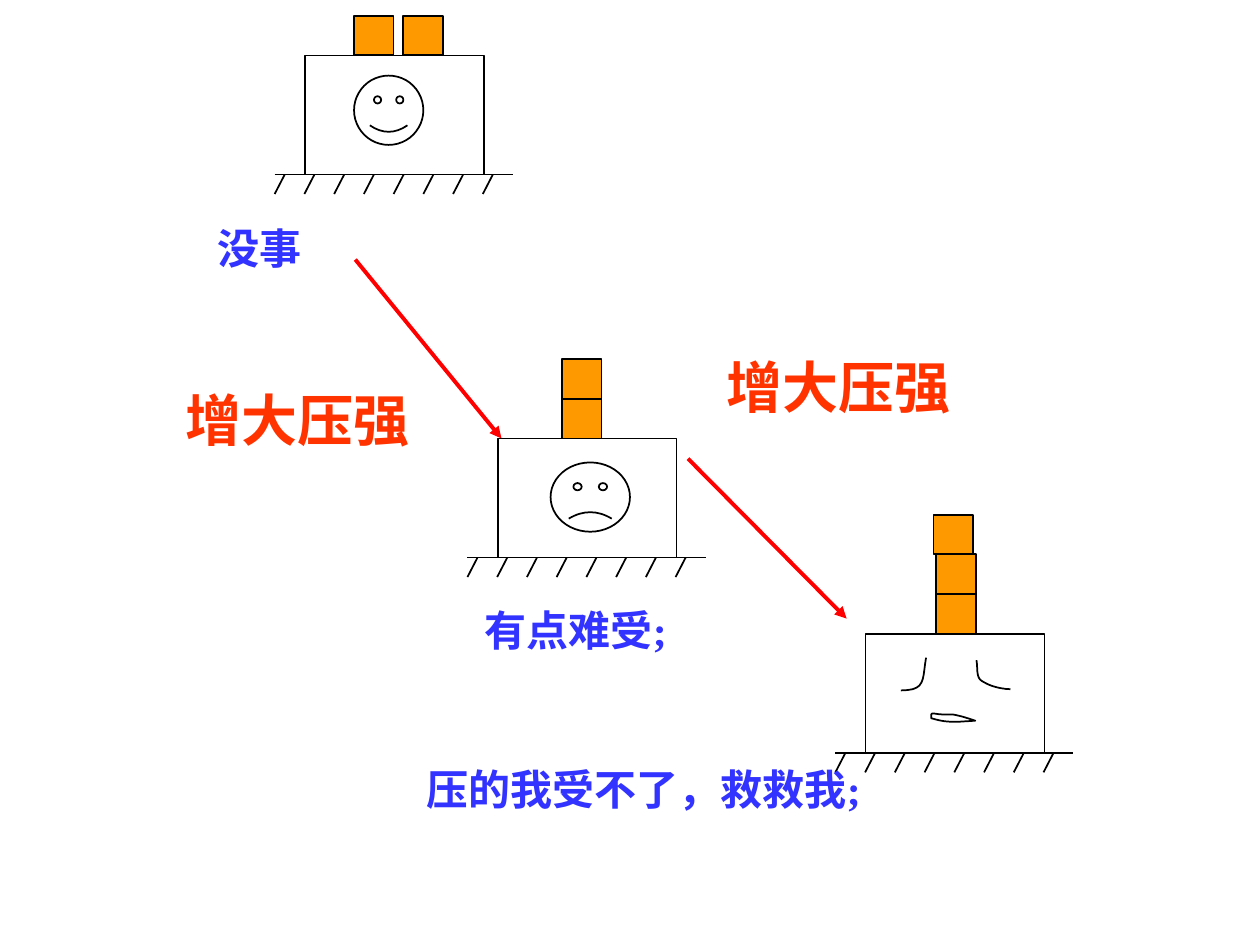
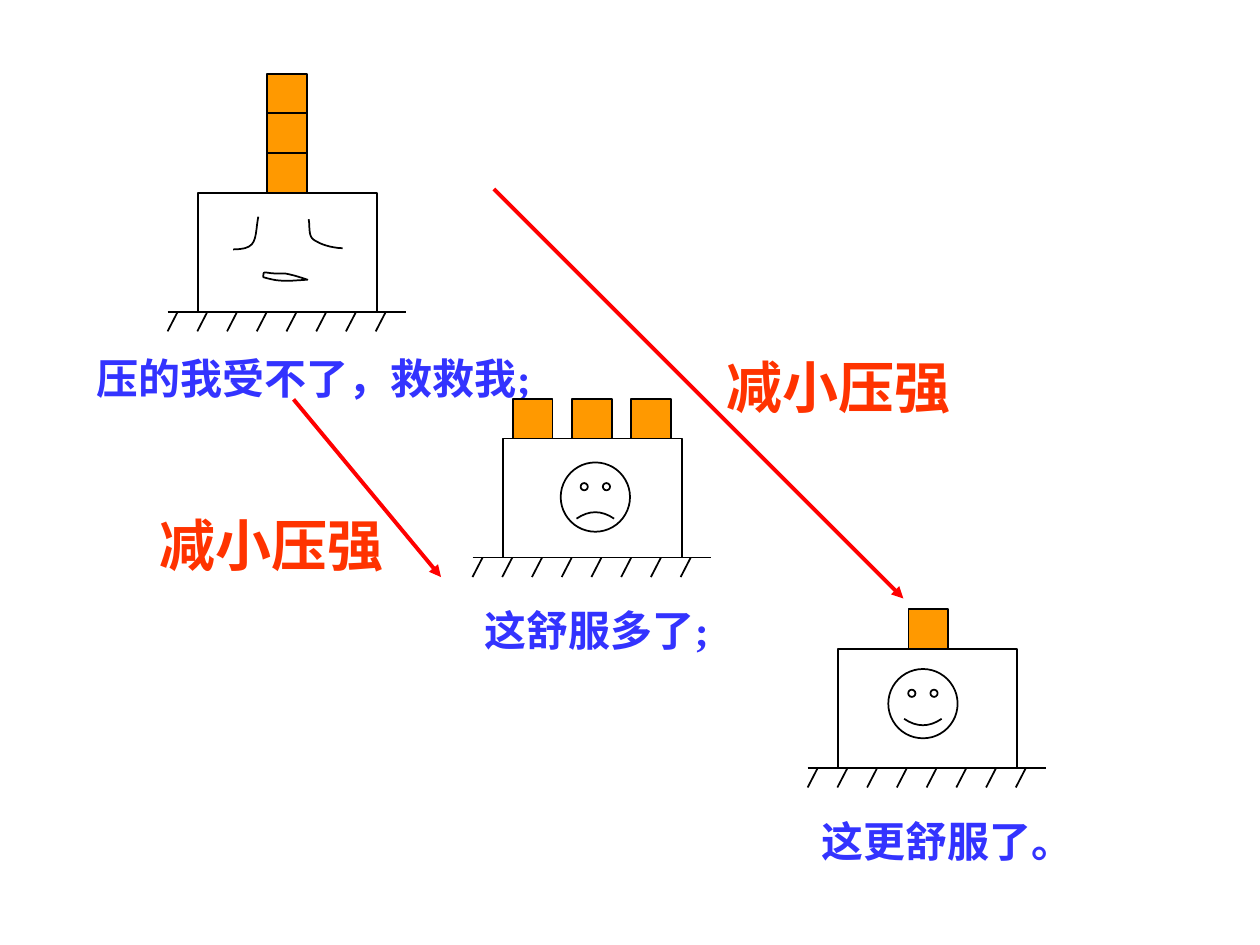
import pptx
import pptx.util
import pptx.dml.color
import pptx.enum.dml
import pptx.enum.lang
import pptx.enum.shapes
import pptx.enum.text
import pptx.oxml

Inches = pptx.util.Inches
Pt = pptx.util.Pt
PRESETS = pptx.enum.shapes.MSO_SHAPE

# Shared colours, fonts and text formats
BLACK, ORANGE, BLUE = "000000", "FF9900", "3333FF"
ARROW_RED, LABEL_RED = "FF0000", "FF3300"
SANS, SERIF = "Cabin", "Times New Roman"
CAPTION = {"size": Pt(24), "bold": True}
PRESSURE = {"size": Pt(32), "bold": True}

# Shared measures of a desk, its weights and the ground below
DESK_W, DESK_H = 1.42, 0.945
WEIGHT = 0.315
GROUND_W, OVERHANG = 1.89, 0.24
TICKS, TICK_GAP, TICK_W, TICK_H = 8, 0.236, 0.08, 0.155

# Suffering face, relative to the desk: start, Bezier segments, closed or not
SUFFERING = [
    ((0.48, 0.19), [((0.45, 0.37), (0.48, 0.45), (0.28, 0.45))], False),
    ((0.88, 0.21), [((0.89, 0.26), (0.88, 0.31), (0.90, 0.35)),
                    ((0.91, 0.37), (0.93, 0.38), (0.95, 0.39)),
                    ((1.00, 0.42), (1.09, 0.44), (1.15, 0.44))], False),
    ((0.52, 0.67), [((0.65, 0.71), (0.71, 0.70), (0.87, 0.69)),
                    ((0.81, 0.67), (0.75, 0.65), (0.69, 0.64)),
                    ((0.52, 0.65), (0.52, 0.60), (0.52, 0.67))], True),
]


def rgb(color):
    return pptx.dml.color.RGBColor.from_string(color)


def style(shape, fill=None):
    """Thin black outline, with a plain fill or none."""
    shape.shadow.inherit = False
    if fill:
        shape.fill.solid()
        shape.fill.fore_color.rgb = rgb(fill)
    else:
        shape.fill.background()
    shape.line.color.rgb = rgb(BLACK)
    shape.line.width = Pt(1)


def add_preset(shapes, preset, left, top, width, height, fill=None):
    shape = shapes.add_shape(preset, Inches(left), Inches(top),
                             Inches(width), Inches(height))
    style(shape, fill)
    return shape


def add_line(shapes, start, end, color=BLACK, width=1, arrow=False):
    line = shapes.add_connector(pptx.enum.shapes.MSO_CONNECTOR.STRAIGHT,
                                *(Inches(v) for v in (*start, *end)))
    line.line.color.rgb = rgb(color)
    line.line.width = Pt(width)
    if arrow:
        head = pptx.oxml.parse_xml(
            '<a:tailEnd xmlns:a="http://schemas.openxmlformats.org/drawingml/2006/main"'
            ' type="triangle"/>')
        line.line._get_or_add_ln().append(head)
    properties = line._element.spPr
    properties.append(properties.makeelement(
        "{http://schemas.openxmlformats.org/drawingml/2006/main}effectLst"))


def add_arrow(slide, start, end):
    add_line(slide.shapes, start, end, ARROW_RED, 2.25, arrow=True)


def add_text(slide, left, top, width, height, runs, text_format, color):
    """Place a line of text given as (words, font) runs."""
    box = slide.shapes.add_textbox(Inches(left), Inches(top),
                                   Inches(width), Inches(height))
    frame = box.text_frame
    frame.word_wrap = True
    frame.auto_size = pptx.enum.text.MSO_AUTO_SIZE.SHAPE_TO_FIT_TEXT
    for words, font_name in runs:
        run = frame.paragraphs[0].add_run()
        run.text = words
        run.font.name = font_name
        run.font.language_id = pptx.enum.lang.MSO_LANGUAGE_ID.SIMPLIFIED_CHINESE
        run.font.color.rgb = rgb(color)
        for name, value in text_format.items():
            setattr(run.font, name, value)


def add_caption(slide, left, top, width, *runs):
    add_text(slide, left, top, width, 0.5, runs, CAPTION, BLUE)


def add_pressure(slide, left, top, words):
    add_text(slide, left, top, 2.58, 0.63, [(words, SERIF)], PRESSURE, LABEL_RED)


def bezier_points(start, segments, steps=10):
    """Sample the joined cubic curves as points."""
    points = []
    for segment in segments:
        corners = (start, *segment)
        for step in range(1, steps + 1):
            t = step / steps
            weights = ((1 - t) ** 3, 3 * t * (1 - t) ** 2, 3 * t * t * (1 - t), t ** 3)
            points.append(tuple(sum(w * c[axis] for w, c in zip(weights, corners))
                                for axis in (0, 1)))
        start = segment[-1]
    return points


def add_suffering_face(shapes, x, y):
    def place(point):
        return Inches(x + point[0]), Inches(y + point[1])

    for start, segments, closed in SUFFERING:
        builder = shapes.build_freeform(*place(start))
        builder.add_line_segments([place(p) for p in bezier_points(start, segments)],
                                  close=closed)
        style(builder.convert_to_shape())


def add_round_face(shapes, x, y, dx, dy, width, mood):
    face = add_preset(shapes, PRESETS.SMILEY_FACE, x + dx, y + dy, width, 0.55)
    face.adjustments[0] = mood


def add_desk(slide, x, y, weights, face=None):
    """Desk on hatched ground; weights are (offset, level), no face means suffering."""
    shapes = slide.shapes.add_group_shape().shapes
    add_preset(shapes, PRESETS.RECTANGLE, x, y, DESK_W, DESK_H)
    if face:
        add_round_face(shapes, x, y, *face)
    else:
        add_suffering_face(shapes, x, y)
    # Ground line and its hatching
    left, ground = x - OVERHANG, y + DESK_H
    add_line(shapes, (left, ground), (left + GROUND_W, ground))
    for i in range(TICKS):
        foot = left + i * TICK_GAP
        add_line(shapes, (foot + TICK_W, ground), (foot, ground + TICK_H))
    # Weights on top
    for offset, level in weights:
        add_preset(shapes, PRESETS.RECTANGLE, x + offset, y - level * WEIGHT,
                   WEIGHT, WEIGHT, ORANGE)


def add_increase_slide(prs):
    slide = prs.slides.add_slide(prs.slide_layouts[6])
    add_desk(slide, 6.87, 5.03, [(0.56, 1), (0.56, 2), (0.54, 3)])
    add_caption(slide, 3.29, 6.01, 4.25, ("压的我受不了，救救", SANS), ("我;", SERIF))
    add_desk(slide, 3.95, 3.48, [(0.51, 1), (0.51, 2)], (0.42, 0.19, 0.63, -0.047))
    add_caption(slide, 3.75, 4.75, 2.5, ("有点难受;", SERIF))
    add_caption(slide, 1.63, 1.72, 2.92, ("没事", SERIF))
    add_pressure(slide, 1.37, 3.01, "增大压强")
    add_arrow(slide, (2.82, 2.06), (3.98, 3.48))
    add_pressure(slide, 5.67, 2.75, "增大压强")
    add_arrow(slide, (5.46, 3.64), (6.72, 4.91))
    add_desk(slide, 2.42, 0.44, [(0.39, 1), (0.78, 1)], (0.39, 0.16, 0.55, 0.047))


def add_decrease_slide(prs):
    slide = prs.slides.add_slide(prs.slide_layouts[6])
    add_desk(slide, 1.57, 1.53, [(0.55, level) for level in (1, 2, 3)])
    add_caption(slide, 0.67, 2.75, 4.25, ("压的我受不了，救救", SANS), ("我;", SERIF))
    add_desk(slide, 3.99, 3.48, [(0.08 + 0.47 * i, 1) for i in range(3)],
             (0.46, 0.19, 0.55, -0.047))
    add_caption(slide, 3.75, 4.75, 2.5, ("这舒服多", SANS), ("了;", SERIF))
    add_desk(slide, 6.65, 5.15, [(0.56, 1)], (0.4, 0.16, 0.55, 0.047))
    add_caption(slide, 6.42, 6.42, 2.92, ("这更", SANS), ("舒服了。", SERIF))
    add_pressure(slide, 1.17, 4, "减小压强")
    add_arrow(slide, (2.33, 3.17), (3.5, 4.58))
    add_pressure(slide, 5.67, 2.75, "减小压强")
    add_arrow(slide, (3.92, 1.5), (7.17, 4.75))


def main():
    prs = pptx.Presentation()
    prs.slide_width, prs.slide_height = Inches(10), Inches(7.5)
    add_increase_slide(prs)
    add_decrease_slide(prs)
    prs.save("out.pptx")


if __name__ == "__main__":
    main()
